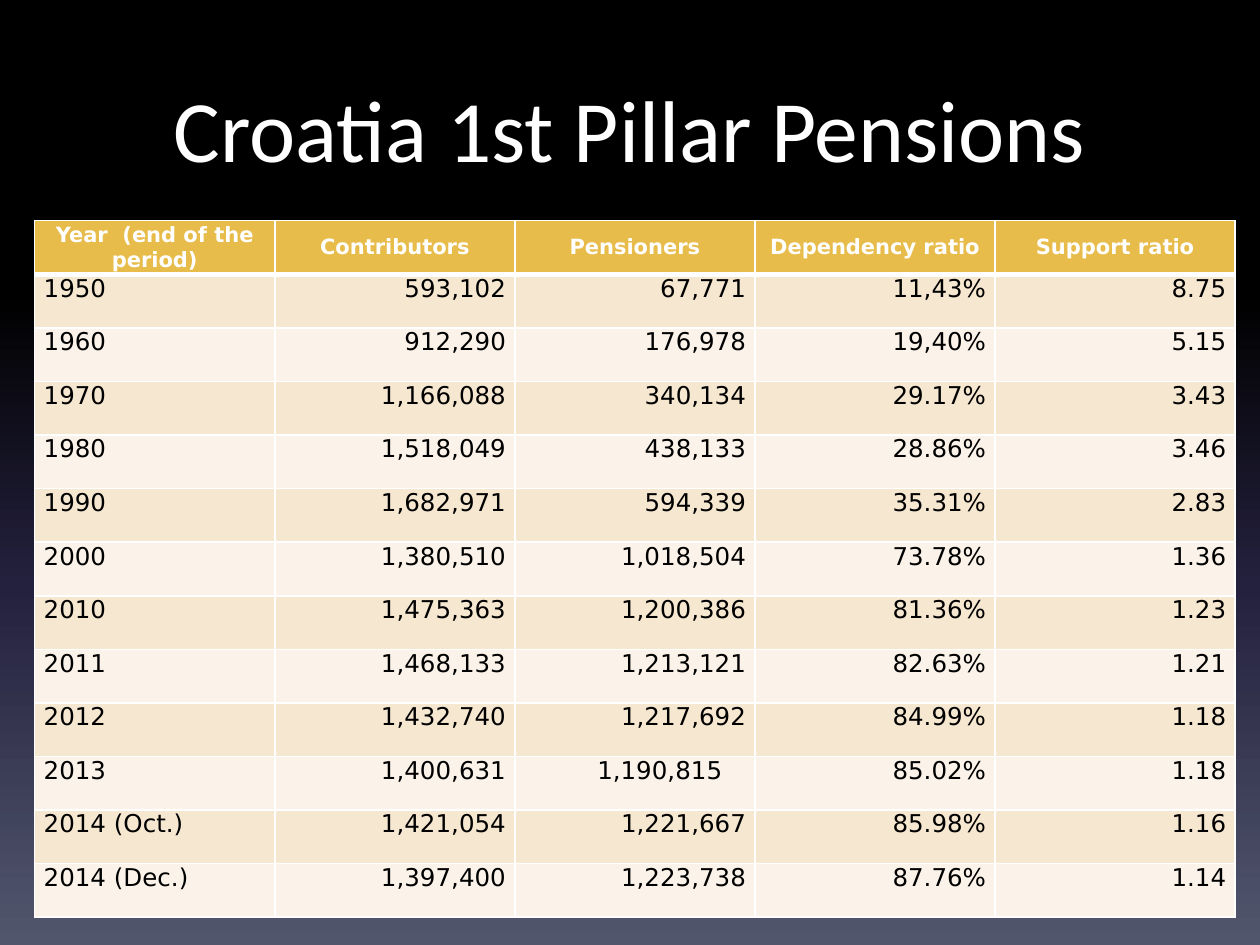
import copy
import dataclasses

import lxml.etree
import pptx
import pptx.dml.color
import pptx.enum.text
import pptx.oxml.ns
import pptx.util

Cm = pptx.util.Cm
Pt = pptx.util.Pt
RGB = pptx.dml.color.RGBColor.from_string
qn = pptx.oxml.ns.qn
ALIGN = pptx.enum.text.PP_ALIGN
ANCHOR = pptx.enum.text.MSO_ANCHOR


@dataclasses.dataclass(frozen=True)
class Theme:
    """Colours, fonts and sizes of the slide."""
    white: str = "FFFFFF"
    ink: str = "000000"
    gold: str = "E8BC4A"
    bands: tuple = ("F6E7D0", "FBF3E9")
    fade: tuple = ((0, "000000"), (0.31, "000000"), (0.62, "24213E"), (1, "51566D"))
    title_font: str = "Calibri"
    grid_font: str = "DejaVu Sans"
    title_size: int = 50
    head_size: int = 12
    body_size: int = 14
    thin: int = 1
    thick: int = 3


THEME = Theme()
HEADS = ("Year  (end of the period)", "Contributors", "Pensioners",
         "Dependency ratio", "Support ratio")
ROWS = (
    ("1950", "593,102", "67,771", "11,43%", "8.75"),
    ("1960", "912,290", "176,978", "19,40%", "5.15"),
    ("1970", "1,166,088", "340,134", "29.17%", "3.43"),
    ("1980", "1,518,049", "438,133", "28.86%", "3.46"),
    ("1990", "1,682,971", "594,339", "35.31%", "2.83"),
    ("2000", "1,380,510", "1,018,504", "73.78%", "1.36"),
    ("2010", "1,475,363", "1,200,386", "81.36%", "1.23"),
    ("2011", "1,468,133", "1,213,121", "82.63%", "1.21"),
    ("2012", "1,432,740", "1,217,692", "84.99%", "1.18"),
    ("2013", "1,400,631", "1,190,815", "85.02%", "1.18"),
    ("2014 (Oct.)", "1,421,054", "1,221,667", "85.98%", "1.16"),
    ("2014 (Dec.)", "1,397,400", "1,223,738", "87.76%", "1.14"),
)


def style(para, font, size, color, bold, align):
    """Set the font and alignment of a paragraph."""
    para.alignment = align
    para.font.name = font
    para.font.size = Pt(size)
    para.font.bold = bold
    para.font.color.rgb = RGB(color)


def add_fade(slide):
    """Fill the background with a gradient from top to bottom."""
    fill = slide.background.fill
    fill.gradient()
    fill.gradient_angle = 270
    stops = slide.element.find(".//" + qn("a:gsLst"))
    for _ in range(len(THEME.fade) - len(stops)):
        stops.append(copy.deepcopy(stops[0]))
    for stop, (place, color) in zip(fill.gradient_stops, THEME.fade):
        stop.position = place
        stop.color.rgb = RGB(color)


def add_title(slide, text, left, top, width, height):
    """Place the title in the given box."""
    title = slide.shapes.title
    title.left, title.top, title.width, title.height = left, top, width, height
    frame = title.text_frame
    frame.text = text
    frame.auto_size = pptx.enum.text.MSO_AUTO_SIZE.NONE
    frame.vertical_anchor = ANCHOR.TOP
    frame.margin_top = Cm(0.25)
    style(frame.paragraphs[0], THEME.title_font, THEME.title_size,
          THEME.white, False, ALIGN.CENTER)


def add_edge(cell, side, points):
    """Draw one white border of a cell."""
    line = lxml.etree.SubElement(
        cell._tc.get_or_add_tcPr(), qn("a:ln" + side), w=str(Pt(points)))
    solid = lxml.etree.SubElement(line, qn("a:solidFill"))
    lxml.etree.SubElement(solid, qn("a:srgbClr"), val=THEME.white)


def fill_cell(cell, text, row, col):
    """Write and format one cell by its place in the table."""
    head = row == 0
    for side in "LRTB":
        rule = (side, row) in (("B", 0), ("T", 1))
        add_edge(cell, side, THEME.thick if rule else THEME.thin)
    cell.fill.solid()
    cell.fill.fore_color.rgb = RGB(THEME.gold if head else THEME.bands[(row - 1) % 2])
    cell.margin_left = cell.margin_right = Cm(0.18)
    cell.margin_top = cell.margin_bottom = 0
    cell.vertical_anchor = ANCHOR.MIDDLE if head else ANCHOR.TOP
    cell.text = text
    para = cell.text_frame.paragraphs[0]
    para.space_after = Pt(6)
    if head:
        style(para, THEME.grid_font, THEME.head_size, THEME.white, True, ALIGN.CENTER)
    else:
        align = ALIGN.RIGHT if col else ALIGN.JUSTIFY
        style(para, THEME.grid_font, THEME.body_size, THEME.ink, False, align)


def add_grid(slide, left, top, width, height):
    """Place the pension table in the given box."""
    data = (HEADS, *ROWS)
    table = slide.shapes.add_table(
        len(data), len(HEADS), left, top, width, height).table
    for row, texts in enumerate(data):
        for col, text in enumerate(texts):
            fill_cell(table.cell(row, col), text, row, col)
    years = [texts[0] for texts in data]
    table.cell(years.index("2013"), HEADS.index("Pensioners")).margin_right = Cm(0.66)


def main():
    """Build and save the slide."""
    deck = pptx.Presentation()
    deck.slide_width, deck.slide_height = Cm(25.4), Cm(19.05)
    slide = deck.slides.add_slide(deck.slide_layouts.get_by_name("Title Only"))
    add_fade(slide)
    add_title(slide, "Croatia 1st Pillar Pensions",
              Cm(1.27), Cm(1.27), Cm(22.86), Cm(3.18))
    add_grid(slide, Cm(0.7), Cm(4.45), Cm(24.2), Cm(14.05))
    deck.save("out.pptx")


if __name__ == "__main__":
    main()
